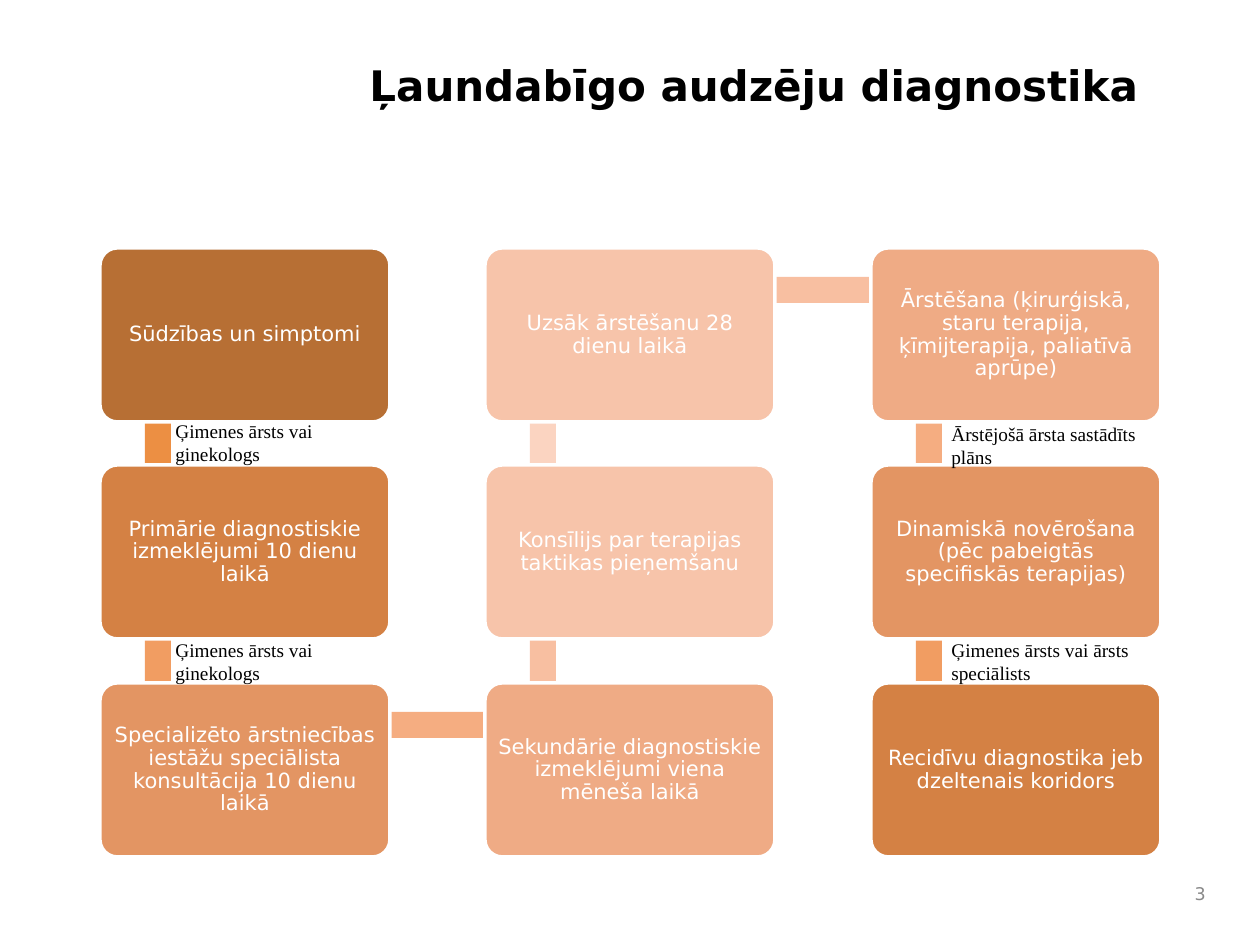
import pptx
import pptx.util
import pptx.dml.color
import pptx.enum.shapes
import pptx.enum.text

PX = 914400 // 126
SHAPE = pptx.enum.shapes.MSO_SHAPE
ALIGN = pptx.enum.text.PP_ALIGN
ANCHOR = pptx.enum.text.MSO_ANCHOR
COLORS = {
    "white": "FFFFFF", "black": "000000", "grey": "898989",
    "brown": "B76F34", "rust": "D48144", "copper": "E39563",
    "peach": "EFAB85", "blush": "F7C4AA",
    "bar1": "EC8F43", "bar2": "F19D62", "bar3": "F5AD81",
    "bar4": "F8BFA1", "bar5": "FBD4C1",
}
LEFTS = [100, 485, 871]
TOPS = [248, 465, 683]


def add_block(kind, x, y, w, h, fill):
    s = shapes.add_shape(kind, x * PX, y * PX, w * PX, h * PX)
    s.shadow.inherit = False
    s.fill.solid()
    s.fill.fore_color.rgb = pptx.dml.color.RGBColor.from_string(COLORS[fill])
    s.line.fill.background()
    return s


def write(s, text, font, size, color, align=ALIGN.LEFT, anchor=ANCHOR.TOP):
    tf = s.text_frame
    tf.word_wrap = True
    tf.vertical_anchor = anchor
    p = tf.paragraphs[0]
    p.text = text
    p.alignment = align
    p.font.name = font
    p.font.size = pptx.util.Pt(size)
    p.font.color.rgb = pptx.dml.color.RGBColor.from_string(COLORS[color])
    return p


prs = pptx.Presentation()
prs.slide_width = pptx.util.Inches(10)
prs.slide_height = pptx.util.Inches(7.5)
shapes = prs.slides.add_slide(prs.slide_layouts[6]).shapes

title = shapes.add_textbox(357 * PX, 53 * PX, 840 * PX, 142 * PX)
p = write(title, "Ļaundabīgo audzēju diagnostika", "DejaVu Sans", 24, "black")
p.font.bold = True

number = shapes.add_textbox(1176 * PX, 872 * PX, 42 * PX, 42 * PX)
write(number, "3", "DejaVu Sans", 10, "grey", ALIGN.RIGHT, ANCHOR.MIDDLE)

vertical_bars = [
    (0, 0, "bar1"), (0, 1, "bar2"), (1, 0, "bar5"),
    (1, 1, "bar4"), (2, 0, "bar3"), (2, 1, "bar2"),
]
for col, row, fill in vertical_bars:
    add_block(SHAPE.RECTANGLE, LEFTS[col] + 45, TOPS[row] + 44, 26, 215, fill)

for col, row, fill in [(0, 2, "bar3"), (1, 0, "bar4")]:
    add_block(SHAPE.RECTANGLE, LEFTS[col] + 59, TOPS[row] + 29, 384, 26, fill)

steps = [
    (0, 0, "brown", "Sūdzības un simptomi"),
    (0, 1, "rust", "Primārie diagnostiskie izmeklējumi 10 dienu laikā"),
    (0, 2, "copper", "Specializēto ārstniecības iestāžu speciālista konsultācija 10 dienu laikā"),
    (1, 2, "peach", "Sekundārie diagnostiskie izmeklējumi viena mēneša laikā"),
    (1, 1, "blush", "Konsīlijs par terapijas taktikas pieņemšanu"),
    (1, 0, "blush", "Uzsāk ārstēšanu 28 dienu laikā"),
    (2, 0, "peach", "Ārstēšana (ķirurģiskā, staru terapija, ķīmijterapija, paliatīvā aprūpe)"),
    (2, 1, "copper", "Dinamiskā novērošana (pēc pabeigtās specifiskās terapijas)"),
    (2, 2, "rust", "Recidīvu diagnostika jeb dzeltenais koridors"),
]
for col, row, fill, text in steps:
    s = add_block(SHAPE.ROUNDED_RECTANGLE, LEFTS[col], TOPS[row], 290, 174, fill)
    s.adjustments[0] = 0.1
    s.line.color.rgb = pptx.dml.color.RGBColor.from_string(COLORS["white"])
    s.line.width = pptx.util.Pt(2)
    tf = s.text_frame
    tf.margin_left = tf.margin_right = tf.margin_top = tf.margin_bottom = 6 * PX
    p = write(s, text, "DejaVu Sans", 12, "white", ALIGN.CENTER, ANCHOR.MIDDLE)
    p.line_spacing = 0.9

labels = [
    (163, 413, "Ģimenes ārsts vai ginekologs"),
    (163, 632, "Ģimenes ārsts vai ginekologs"),
    (939, 632, "Ģimenes ārsts vai ārsts speciālists"),
    (939, 416, "Ārstējošā ārsta sastādīts plāns"),
]
for x, y, text in labels:
    s = shapes.add_textbox(x * PX, y * PX, 237 * PX, 59 * PX)
    write(s, text, "Times New Roman", 11, "black")

prs.save("out.pptx")
